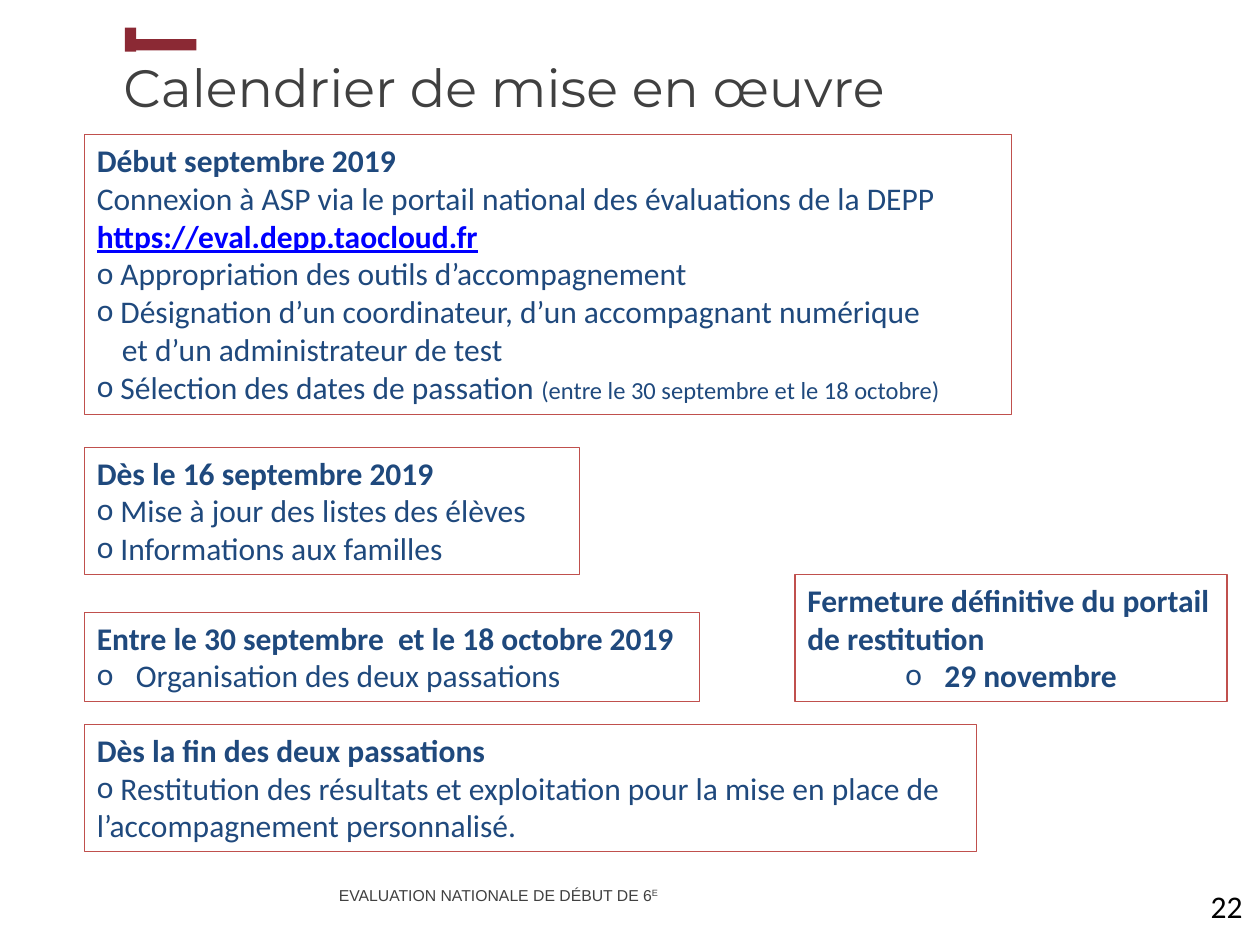
from pptx import Presentation
from pptx.dml.color import RGBColor as RGB
from pptx.enum.shapes import MSO_SHAPE as Shape
from pptx.enum.text import MSO_ANCHOR as Anchor, PP_ALIGN as Align
from pptx.oxml.ns import qn
from pptx.util import Inches, Pt
from lxml.etree import SubElement

COLORS = {"navy": "1F497D", "red": "C0504D", "wine": "8B2934",
          "gray": "404040", "link": "0000FF", "white": "FFFFFF", "black": "000000"}

BODY = {"name": "Calibri", "size": Pt(18), "color": "navy", "bold": False}
STYLES = {
    "text": BODY,
    "bold": BODY | {"bold": True},
    "link": BODY | {"bold": True, "underline": True, "color": "link"},
    "small": BODY | {"size": Pt(14)},
    "title": {"name": "Montserrat", "size": Pt(30), "color": "gray"},
    "foot": {"name": "Arial", "size": Pt(9), "color": "gray"},
    "page": {"name": "Calibri", "size": Pt(18), "color": "black"},
}


def add_run(para, text, style):
    run = para.add_run()
    run.text = text
    for key, value in STYLES[style].items():
        if key == "color":
            run.font.color.rgb = RGB.from_string(COLORS[value])
        else:
            setattr(run.font, key, value)
    return run


def set_para(para, bullet=False, left=0, first=0):
    """Set the indents of a paragraph and, if asked, its round bullet."""
    props = para._p.get_or_add_pPr()
    props.set("marL", str(Inches(left)))
    props.set("indent", str(Inches(first)))
    if bullet:
        SubElement(props, qn("a:buFont")).set("typeface", "Calibri")
        SubElement(props, qn("a:buChar")).set("char", "o")


BULLET = {"bullet": True}
HANGING = {"bullet": True, "left": 0.31, "first": -0.31}

# Each box: left, top, width, height, wrap, paragraphs of (format, align, runs)
BOXES = [
    (0.67, 1.07, 7.36, 2.22, True, [
        ({}, Align.LEFT, [("Début septembre 2019", "bold")]),
        ({}, Align.LEFT, [
            ("Connexion à ASP via le portail national des évaluations de la DEPP ", "text"),
            ("https://eval.depp.taocloud.fr", "link")]),
        (BULLET, Align.LEFT, [(" Appropriation des outils d’accompagnement", "text")]),
        (BULLET, Align.LEFT, [
            (" Désignation d’un coordinateur, d’un accompagnant numérique", "text")]),
        ({"left": 0.2}, Align.LEFT, [("et d’un administrateur de test", "text")]),
        (BULLET, Align.LEFT, [
            (" Sélection des dates de passation ", "text"),
            ("(entre le 30 septembre et le 18 octobre)", "small")]),
    ]),
    (0.67, 3.55, 3.93, 1.01, True, [
        ({}, Align.LEFT, [("Dès le 16 septembre 2019", "bold")]),
        (BULLET, Align.LEFT, [(" Mise à jour des listes des élèves", "text")]),
        (BULLET, Align.LEFT, [(" Informations aux familles", "text")]),
    ]),
    (0.67, 4.86, 4.88, 0.71, False, [
        ({}, Align.LEFT, [("Entre le 30 septembre  et le 18 octobre 2019", "bold")]),
        (HANGING, Align.LEFT, [("Organisation des deux passations", "text")]),
    ]),
    (0.67, 5.75, 7.08, 1.01, True, [
        ({}, Align.LEFT, [("Dès la fin des deux passations", "bold")]),
        (BULLET, Align.LEFT, [
            (" Restitution des résultats et exploitation pour la mise en place de "
             "l’accompagnement personnalisé.", "text")]),
    ]),
    (6.31, 4.56, 3.43, 1.01, True, [
        ({}, Align.LEFT, [("Fermeture définitive du portail de restitution", "bold")]),
        (HANGING, Align.CENTER, [("29 novembre", "bold")]),
    ]),
]

deck = Presentation()
deck.slide_width, deck.slide_height = Inches(10), Inches(7.5)
slide = deck.slides.add_slide(deck.slide_layouts[5])
shapes = slide.shapes

# Title
title = shapes.title
title.left, title.top = Inches(0.88), Inches(0.08)
title.width, title.height = Inches(8.75), Inches(0.91)
title.text_frame.vertical_anchor = Anchor.BOTTOM
para = title.text_frame.paragraphs[0]
para.alignment = Align.LEFT
add_run(para, "Calendrier de mise en œuvre", "title")

# Corner mark above the title
for area in [(0.99, 0.22, 0.09, 0.19), (1.03, 0.31, 0.53, 0.09)]:
    bar = shapes.add_shape(Shape.RECTANGLE, *map(Inches, area))
    bar.shadow.inherit = False
    bar.fill.solid()
    bar.fill.fore_color.rgb = RGB.from_string(COLORS["wine"])
    bar.line.fill.background()

# Calendar boxes
for *area, wrap, paras in BOXES:
    box = shapes.add_shape(Shape.RECTANGLE, *map(Inches, area))
    box.shadow.inherit = False
    box.fill.solid()
    box.fill.fore_color.rgb = RGB.from_string(COLORS["white"])
    box.line.color.rgb = RGB.from_string(COLORS["red"])
    box.line.width = Pt(0.75)
    frame = box.text_frame
    frame.word_wrap = wrap
    frame.vertical_anchor = Anchor.TOP
    for i, (form, align, runs) in enumerate(paras):
        para = frame.add_paragraph() if i else frame.paragraphs[0]
        set_para(para, **form)
        para.alignment = align
        for text, style in runs:
            add_run(para, text, style)

# Footer and page number
foot = shapes.add_textbox(Inches(2.59), Inches(6.72), Inches(3.88), Inches(0.74)).text_frame
foot.word_wrap = True
foot.vertical_anchor = Anchor.MIDDLE
para = foot.paragraphs[0]
para.line_spacing = Pt(13.2)
add_run(para, "EVALUATION NATIONALE DE DÉBUT DE 6", "foot")
power = add_run(para, "E", "foot")
power.font._element.set("baseline", "30000")

page = shapes.add_textbox(Inches(9.51), Inches(6.99), Inches(0.49), Inches(0.4)).text_frame
add_run(page.paragraphs[0], "22", "page")

deck.save("out.pptx")
